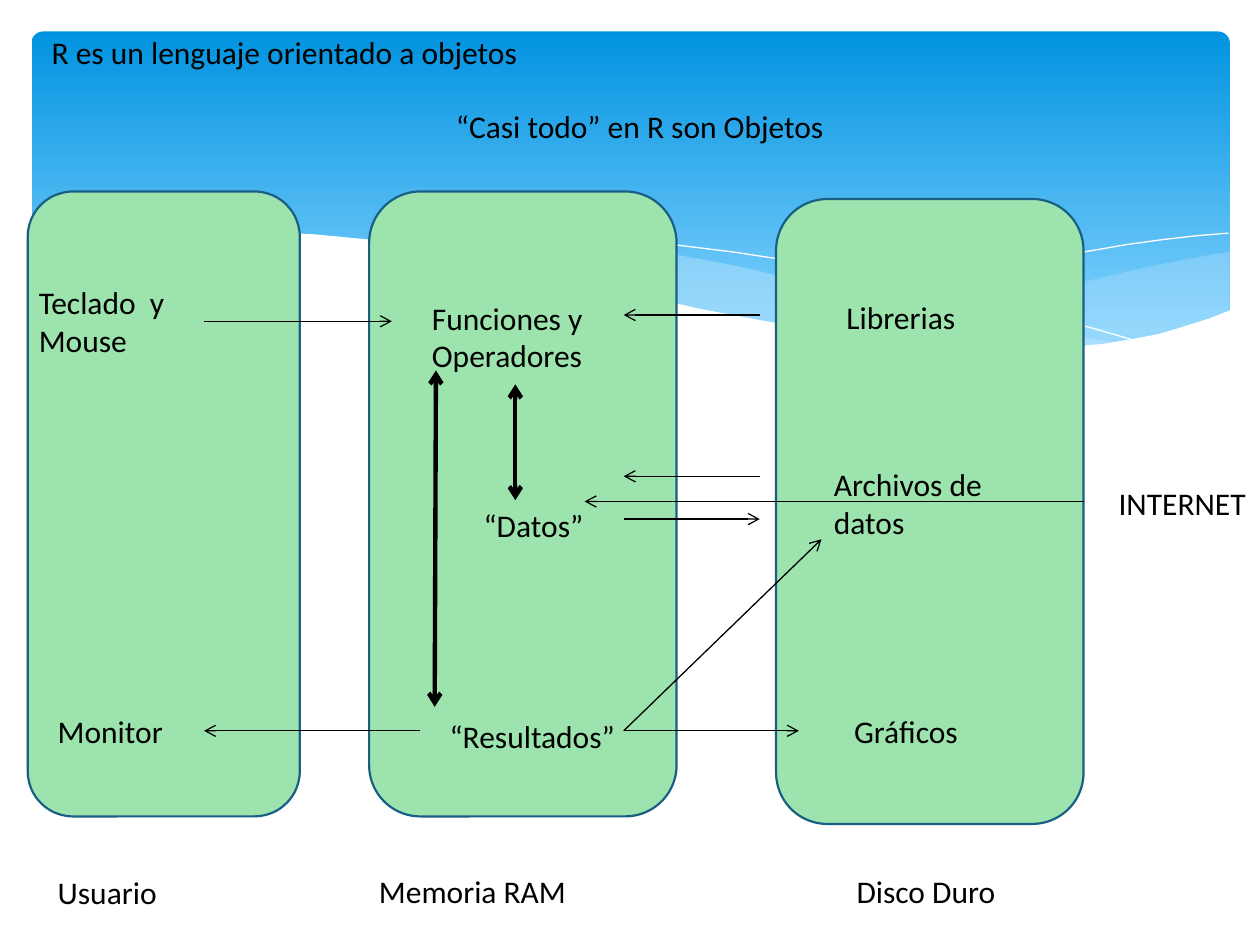
from dataclasses import dataclass

from lxml import etree
from pptx import Presentation
from pptx.dml.color import RGBColor
from pptx.enum import shapes, text
from pptx.oxml import ns
from pptx.util import Inches, Pt


@dataclass(frozen=True)
class Theme:
    sky_top: RGBColor = RGBColor.from_string("0293E0")
    sky_bottom: RGBColor = RGBColor.from_string("83D3FE")
    wave: RGBColor = RGBColor.from_string("C6E7FC")
    white: RGBColor = RGBColor.from_string("FFFFFF")
    panel: RGBColor = RGBColor.from_string("9DE3AE")
    panel_line: RGBColor = RGBColor.from_string("195F84")
    ink: RGBColor = RGBColor.from_string("000000")
    font: str = "Calibri"
    size: Pt = Pt(18)
    panel_width: Pt = Pt(1.25)
    thin: Pt = Pt(0.75)
    thick: Pt = Pt(2.5)


theme = Theme()

presentation = Presentation()
presentation.slide_width, presentation.slide_height = Inches(10), Inches(7.5)
slide = presentation.slides.add_slide(presentation.slide_layouts[5])


def add_rounded(left, top, width, height):
    shape = slide.shapes.add_shape(
        shapes.MSO_SHAPE.ROUNDED_RECTANGLE,
        Inches(left), Inches(top), Inches(width), Inches(height))
    shape.shadow.inherit = False
    return shape


def set_label(box, words, left, top, width, height, wrap):
    box.left, box.top = Inches(left), Inches(top)
    box.width, box.height = Inches(width), Inches(height)
    frame = box.text_frame
    frame.text = words
    frame.word_wrap = wrap
    frame.auto_size = text.MSO_AUTO_SIZE.SHAPE_TO_FIT_TEXT
    frame.vertical_anchor = text.MSO_ANCHOR.TOP
    paragraph = frame.paragraphs[0]
    paragraph.alignment = text.PP_ALIGN.LEFT
    font = paragraph.runs[0].font
    font.name, font.size, font.color.rgb = theme.font, theme.size, theme.ink


# Sky band
sky = add_rounded(0.25, 0.25, 9.51, 2.7)
sky.adjustments[0] = 0.034
sky.fill.gradient()
sky.fill.gradient_angle = 270
top_stop, bottom_stop = sky.fill.gradient_stops
top_stop.color.rgb, top_stop.position = theme.sky_top, 0
bottom_stop.color.rgb, bottom_stop.position = theme.sky_bottom, 0.9
sky.line.fill.background()

# Waves: points, fill colour (None for an open white line), opacity in percent
right_wave = [
    (9.76, 2), (9.62, 2.02), (9.35, 2.07), (9.06, 2.13), (8.76, 2.2), (8.32, 2.3),
    (7.79, 2.42), (7.29, 2.53), (6.83, 2.62), (6.61, 2.65), (6.91, 2.69), (7.19, 2.72),
    (7.45, 2.75), (7.69, 2.77), (8.03, 2.78), (8.35, 2.77), (8.63, 2.75), (8.89, 2.72),
    (9.13, 2.67), (9.35, 2.62), (9.49, 2.57), (9.63, 2.52), (9.76, 2.47)]
middle_wave = [
    (8.93, 2.73), (8.66, 2.69), (8.37, 2.65), (8.07, 2.6), (7.75, 2.54), (7.41, 2.47),
    (7.06, 2.4), (6.68, 2.31), (6.29, 2.22), (5.98, 2.14), (5.69, 2.08), (5.41, 2.03),
    (5.14, 1.98), (4.89, 1.94), (4.65, 1.91), (4.2, 1.87), (3.8, 1.85), (3.44, 1.86),
    (3.13, 1.88), (2.86, 1.91), (3.23, 1.96), (3.62, 2.03), (4.04, 2.11), (4.49, 2.22),
    (4.91, 2.32), (5.3, 2.4), (5.66, 2.48), (6.01, 2.55), (6.34, 2.61), (6.65, 2.66),
    (6.95, 2.7), (7.22, 2.74), (7.48, 2.76), (7.73, 2.77), (7.96, 2.78), (8.28, 2.78),
    (8.57, 2.77), (8.76, 2.75)]
left_crest = [
    (3.09, 1.95), (3.28, 1.92), (3.53, 1.89), (3.87, 1.87), (4.16, 1.87), (4.5, 1.88),
    (4.89, 1.9), (5.33, 1.94), (5.82, 2), (6.08, 2.04), (6.36, 2.08), (6.65, 2.13),
    (6.95, 2.19), (7.27, 2.26), (7.6, 2.33), (7.95, 2.41), (8.31, 2.51), (8.69, 2.61),
    (9.07, 2.72)]
right_crest = [
    (6.13, 2.57), (6.53, 2.46), (6.95, 2.35), (7.48, 2.23), (8.06, 2.1), (8.36, 2.04),
    (8.66, 1.99), (8.95, 1.94), (9.24, 1.9), (9.51, 1.87), (9.75, 1.85)]
white_wave = [
    (9.77, 2.46), (9.59, 2.53), (9.4, 2.59), (9.2, 2.65), (8.99, 2.69), (8.75, 2.73),
    (8.5, 2.75), (8.23, 2.77), (7.93, 2.76), (7.61, 2.75), (7.26, 2.72), (6.88, 2.68),
    (6.48, 2.62), (6.03, 2.54), (5.55, 2.45), (5.03, 2.33), (4.47, 2.2), (4.18, 2.13),
    (3.91, 2.07), (3.65, 2.02), (3.4, 1.97), (3.16, 1.94), (2.92, 1.9), (2.5, 1.86),
    (2.11, 1.84), (1.77, 1.84), (1.46, 1.85), (1.19, 1.87), (0.95, 1.91), (0.76, 1.95),
    (0.59, 1.99), (0.46, 2.03), (0.36, 2.07), (0.29, 2.1), (0.23, 2.13), (0.23, 3.29),
    (9.77, 3.29)]
for points, color, opacity in [
    (right_wave, theme.wave, 29),
    (middle_wave, theme.wave, 40),
    (left_crest, None, 100),
    (right_crest, None, 100),
    (white_wave, theme.white, 100),
]:
    start, *rest = [(Inches(x), Inches(y)) for x, y in points]
    builder = slide.shapes.build_freeform(*start)
    builder.add_line_segments(rest, close=color is not None)
    wave = builder.convert_to_shape()
    wave.shadow.inherit = False
    if color is None:
        wave.fill.background()
        wave.line.color.rgb, wave.line.width = theme.white, Pt(0)
        continue
    wave.fill.solid()
    wave.fill.fore_color.rgb = color
    wave.line.fill.background()
    if opacity < 100:
        color_element = wave.fill._xPr.find(".//" + ns.qn("a:srgbClr"))
        etree.SubElement(color_element, ns.qn("a:alpha"), val=str(opacity * 1000))

# Panels: user, memory, disk
for left, top, width in [(0.22, 1.52, 2.16), (2.93, 1.52, 2.44), (6.16, 1.58, 2.44)]:
    panel = add_rounded(left, top, width, 4.96)
    panel.fill.solid()
    panel.fill.fore_color.rgb = theme.panel
    panel.line.color.rgb, panel.line.width = theme.panel_line, theme.panel_width

# The title placeholder comes first in the tree, so lift it above the sky band
title = slide.shapes.title
slide.shapes._spTree.append(title._element)
set_label(title, "R es un lenguaje orientado a objetos", 0.31, 0.21, 4.06, 0.4, True)

for label in [
    ("“Casi todo” en R son Objetos", 3.52, 0.8, 4.37, 0.4, True),
    ("Teclado  y Mouse", 0.21, 2.2, 1.73, 0.71, True),
    ("Monitor", 0.36, 5.6, 1.16, 0.4, False),
    ("Usuario", 0.36, 6.88, 1.02, 0.4, False),
    ("Funciones y Operadores", 3.33, 2.32, 2.3, 0.71, True),
    ("“Datos”", 3.74, 3.97, 1.2, 0.4, True),
    ("“Resultados”", 3.47, 5.64, 1.73, 0.4, False),
    ("Memoria RAM", 2.91, 6.87, 1.9, 0.4, False),
    ("Librerias", 6.62, 2.32, 1.26, 0.4, False),
    ("Archivos de datos", 6.52, 3.64, 1.46, 0.71, True),
    ("Gráficos", 6.68, 5.6, 1.21, 0.4, False),
    ("Disco Duro", 6.7, 6.87, 1.56, 0.4, False),
    ("INTERNET", 8.78, 3.79, 1.4, 0.4, False),
]:
    set_label(slide.shapes.add_textbox(0, 0, 0, 0), *label)

# Arrows: one-way flows are thin, two-way flows are thick
one_way, two_way = ["a:tailEnd"], ["a:headEnd", "a:tailEnd"]
for x1, y1, x2, y2, width, ends in [
    (1.62, 2.55, 3.11, 2.55, theme.thin, one_way),
    (6.03, 2.5, 4.95, 2.5, theme.thin, one_way),
    (6.03, 3.78, 4.95, 3.78, theme.thin, one_way),
    (4.95, 4.12, 6.03, 4.12, theme.thin, one_way),
    (8.6, 3.98, 4.64, 3.98, theme.thin, one_way),
    (4.95, 5.8, 6.34, 5.8, theme.thin, one_way),
    (4.95, 5.8, 6.52, 4.28, theme.thin, one_way),
    (3.33, 5.8, 1.62, 5.8, theme.thin, one_way),
    (4.09, 3.05, 4.09, 3.97, theme.thick, two_way),
    (3.46, 2.94, 3.45, 5.61, theme.thick, two_way),
]:
    arrow = slide.shapes.add_connector(
        shapes.MSO_CONNECTOR.STRAIGHT, Inches(x1), Inches(y1), Inches(x2), Inches(y2))
    arrow.line.color.rgb, arrow.line.width = theme.ink, width
    for end in ends:
        etree.SubElement(arrow.line._get_or_add_ln(), ns.qn(end), type="arrow")
    etree.SubElement(arrow._element.spPr, ns.qn("a:effectLst"))

presentation.save("out.pptx")
